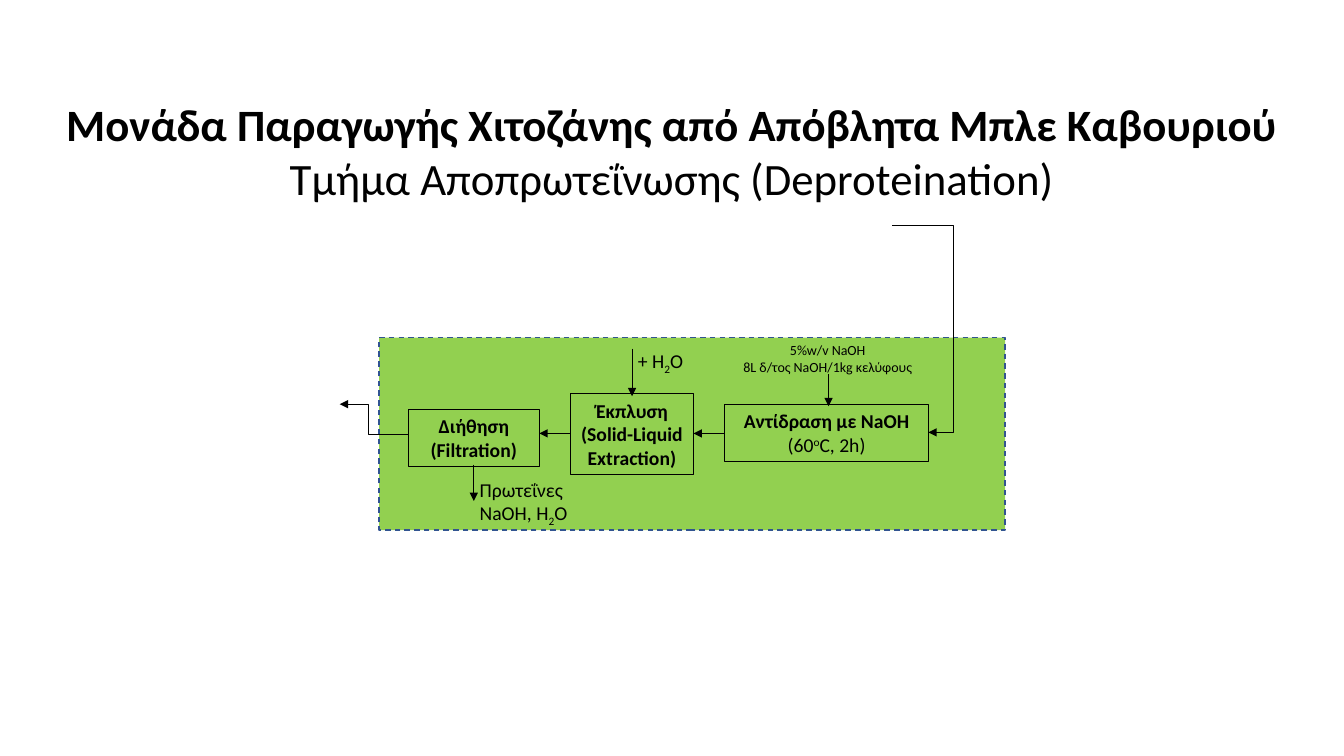
from dataclasses import dataclass

from lxml import etree
from pptx import Presentation
from pptx.dml.color import RGBColor
from pptx.enum.dml import MSO_LINE
from pptx.enum.shapes import MSO_CONNECTOR, MSO_SHAPE
from pptx.enum.text import MSO_ANCHOR, MSO_AUTO_SIZE, PP_ALIGN
from pptx.oxml.ns import qn
from pptx.util import Inches, Pt

RECT = MSO_SHAPE.RECTANGLE
STRAIGHT, ELBOW = MSO_CONNECTOR.STRAIGHT, MSO_CONNECTOR.ELBOW
LEFT, CENTER, JUSTIFY = PP_ALIGN.LEFT, PP_ALIGN.CENTER, PP_ALIGN.JUSTIFY
MIDDLE, DASH, GROW = MSO_ANCHOR.MIDDLE, MSO_LINE.DASH, MSO_AUTO_SIZE.SHAPE_TO_FIT_TEXT

PLAIN, BOLD = {"bold": False}, {"bold": True}
SUB, SUP = -25000, 30000


@dataclass(frozen=True)
class Theme:
    font: str = "Calibri"
    ink: RGBColor = RGBColor(0, 0, 0)
    green: RGBColor = RGBColor(0x92, 0xD0, 0x50)
    blue: RGBColor = RGBColor(0x32, 0x54, 0x91)
    title: float = 32
    body: float = 14
    note: float = 10
    edge: float = 0.75
    flow: float = 0.5
    frame: float = 1


def apply(item, values):
    for name, value in values.items():
        setattr(item, name, value)


class Board:
    """Draws on one slide; places are given on a grid of 100 columns by 100 rows."""

    def __init__(self, deck, theme):
        self.theme = theme
        self.slide = deck.slides.add_slide(deck.slide_layouts[5])
        self.col, self.row = deck.slide_width / 100, deck.slide_height / 100

    def grid(self, *spots):
        """Turns alternating columns and rows into lengths."""
        return [round(n * (self.row if i % 2 else self.col)) for i, n in enumerate(spots)]

    def text(self, shape, lines, size, align=CENTER, wrap=True):
        """Each line is a list of runs: (text, format, baseline shift)."""
        frame = shape.text_frame
        apply(frame, {"word_wrap": wrap, "auto_size": GROW})
        for i, runs in enumerate(lines):
            para = frame.add_paragraph() if i else frame.paragraphs[0]
            para.alignment = align
            for words, style, shift in runs:
                run = para.add_run()
                run.text = words
                apply(run.font, {"name": self.theme.font, "size": Pt(size), **style})
                run.font.color.rgb = self.theme.ink
                if shift:
                    run.font._element.set("baseline", str(shift))

    def title(self, place, lines):
        shape = self.slide.shapes.title
        apply(shape, dict(zip(("left", "top", "width", "height"), self.grid(*place))))
        self.text(shape, lines, self.theme.title)

    def rect(self, place, color, width):
        shape = self.slide.shapes.add_shape(RECT, *self.grid(*place))
        shape.shadow.inherit = False
        shape.fill.background()
        shape.line.color.rgb = color
        shape.line.width = Pt(width)
        return shape

    def panel(self, place):
        shape = self.rect(place, self.theme.blue, self.theme.frame)
        shape.fill.solid()
        shape.fill.fore_color.rgb = self.theme.green
        shape.line.dash_style = DASH

    def step(self, place, lines):
        shape = self.rect(place, self.theme.ink, self.theme.edge)
        shape.text_frame.vertical_anchor = MIDDLE
        self.text(shape, lines, self.theme.body)

    def label(self, place, lines, size, align, wrap=False):
        shape = self.slide.shapes.add_textbox(*self.grid(*place))
        self.text(shape, lines, size, align, wrap)

    def arrow(self, start, end, bend=None):
        """A bend is the share of the width at which the arrow turns."""
        kind = STRAIGHT if bend is None else ELBOW
        link = self.slide.shapes.add_connector(kind, *self.grid(*start, *end))
        link.line.color.rgb = self.theme.ink
        link.line.width = Pt(self.theme.flow)
        props = link._element.spPr
        etree.SubElement(props, qn("a:effectLst"))
        etree.SubElement(props.find(qn("a:ln")), qn("a:tailEnd"), type="triangle")
        if bend is not None:
            guides = props.find(qn("a:prstGeom")).find(qn("a:avLst"))
            etree.SubElement(guides, qn("a:gd"), name="adj1", fmla=f"val {round(bend * 100000)}")


def main():
    deck = Presentation()
    deck.slide_width, deck.slide_height = Inches(13.33), Inches(7.5)
    theme = Theme()
    board = Board(deck, theme)

    board.title((0, 12, 100, 15.73), [
        [("Μονάδα Παραγωγής Χιτοζάνης από Απόβλητα Μπλε Καβουριού", BOLD, 0)],
        [("Τμήμα Αποπρωτεΐνωσης (Deproteination)", PLAIN, 0)]])
    board.panel((28.2, 44.67, 46.58, 25.47))

    steps = [
        ((53.93, 53.47, 15.15, 7.6), [[("Αντίδραση με NaOH ", BOLD, 0), ("(60", PLAIN, 0),
                                       ("o", PLAIN, SUP), ("C, 2h)", PLAIN, 0)]]),
        ((42.45, 52, 9.15, 10.8), [[("Έκπλυση", BOLD, 0)],
                                   [("(Solid-Liquid Extraction)", BOLD, 0)]]),
        ((30.38, 54.13, 9.75, 7.6), [[("Διήθηση (Filtration)", BOLD, 0)]]),
    ]
    for place, lines in steps:
        board.step(place, lines)

    water = [("2", PLAIN, SUB), ("Ο", PLAIN, 0)]
    board.label((46.73, 45.47, 4.95, 4.53), [[("+ Η", PLAIN, 0), *water]], theme.body, LEFT)
    board.label((34.95, 62.53, 8.1, 7.6), [[("Πρωτεΐνες", PLAIN, 0)],
                                           [("NaOH, Η", PLAIN, 0), *water]], theme.body, JUSTIFY)
    board.label((53.33, 44.53, 16.5, 5.87), [[("5%w/v NaOH", PLAIN, 0)],
                                             [("8L δ/τος NaOH/1kg κελύφους", PLAIN, 0)]],
                theme.note, CENTER, wrap=True)

    # Each step feeds the next one, from right to left
    for (here, _), (after, _) in zip(steps, steps[1:]):
        board.arrow((here[0], 57.33), (after[0] + after[2], 57.33))
    for x, top, end in ((61.65, 49.47, 53.73), (47.03, 46.13, 52.4), (35.25, 61.47, 66.27)):
        board.arrow((x, top), (x, end))
    board.arrow((66.38, 29.87), (69.08, 57.2), bend=1.7)
    board.arrow((30.38, 57.47), (25.28, 53.47), bend=0.58)

    deck.save("out.pptx")


if __name__ == "__main__":
    main()
